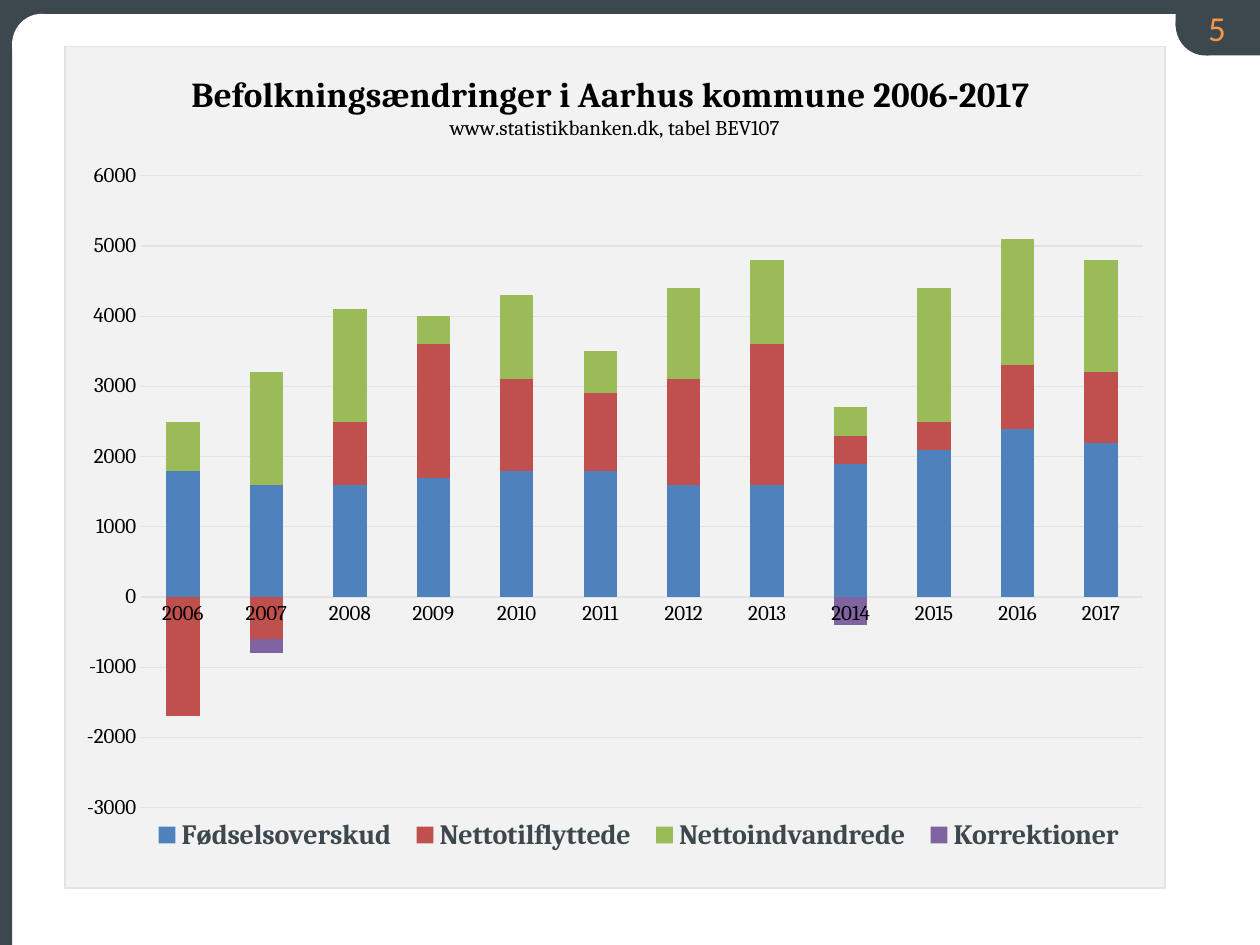
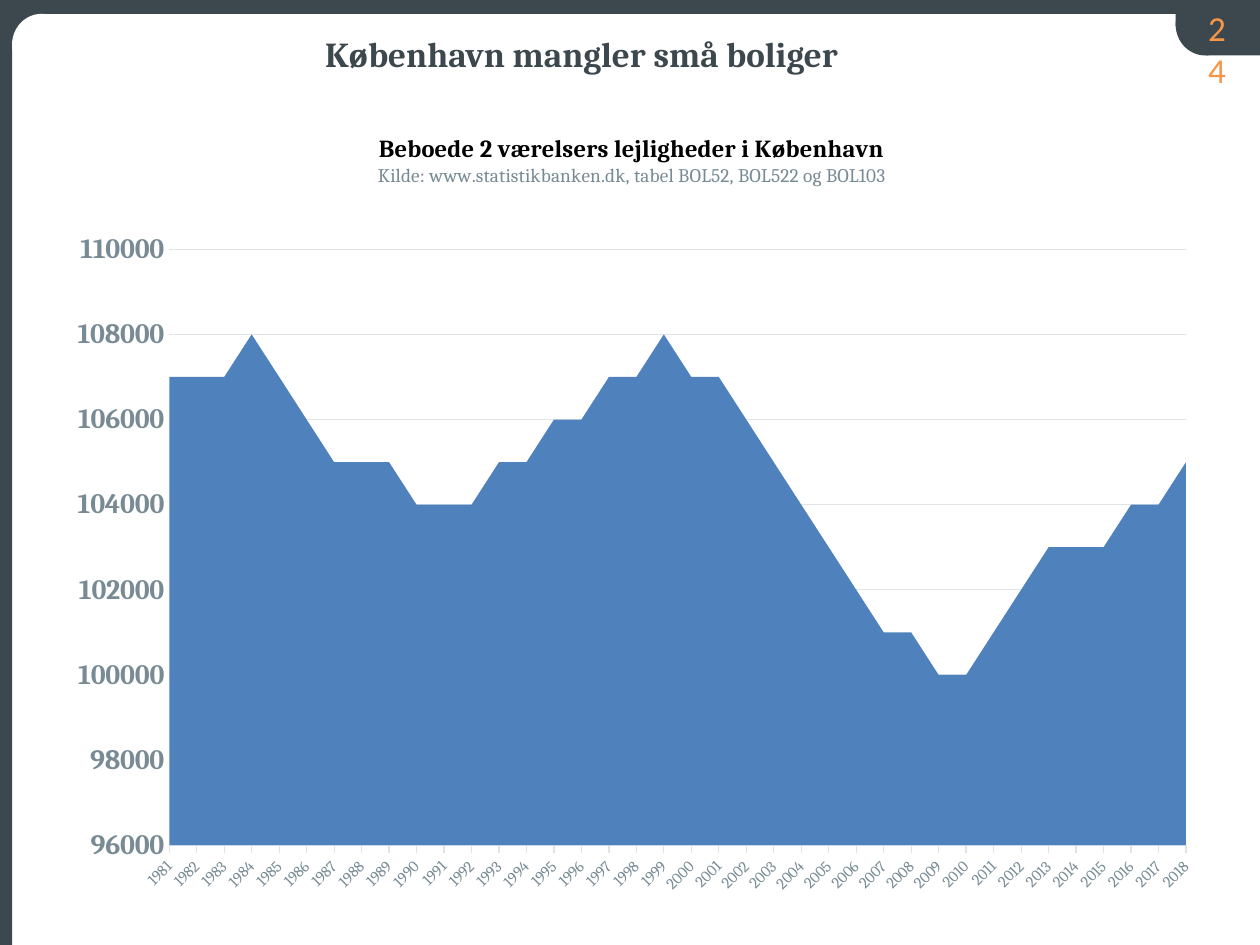
from dataclasses import dataclass

from pptx import Presentation
from pptx.chart.data import CategoryChartData
from pptx.dml.color import RGBColor
from pptx.enum.chart import XL_CHART_TYPE, XL_LEGEND_POSITION, XL_TICK_MARK
from pptx.enum.shapes import MSO_SHAPE
from pptx.enum.text import MSO_ANCHOR, MSO_AUTO_SIZE, PP_ALIGN
from pptx.oxml import parse_xml
from pptx.oxml.ns import nsdecls
from pptx.util import Pt


@dataclass(frozen=True)
class Theme:
    dark: str = "3D484E"
    white: str = "FFFFFF"
    black: str = "000000"
    muted: str = "788B95"
    grid: str = "E0E4E7"
    panel: str = "F2F2F2"
    orange: str = "F79646"
    series: tuple = ("4F81BD", "C0504D", "9BBB59", "8064A2")
    serif: str = "Cambria"
    sans: str = "Calibri"
    head: int = 20
    legend: int = 16
    lead: int = 14
    label: int = 12
    note: int = 11
    base: int = 10
    small: int = 9
    hair: float = 0.75


THEME = Theme()

# Kind, left, top, width, height, colour
BANDS = [
    (MSO_SHAPE.RECTANGLE, 0, 0, 6.9, 540, THEME.dark),
    (MSO_SHAPE.RECTANGLE, 6.9, 0, 713.1, 7.9, THEME.dark),
    (MSO_SHAPE.RECTANGLE, 6.9, 7.9, 17.3, 17.3, THEME.dark),
    (MSO_SHAPE.OVAL, 6.9, 7.9, 33.8, 35.3, THEME.white),
    (MSO_SHAPE.RECTANGLE, 689, 7.9, 31, 23.8, THEME.dark),
    (MSO_SHAPE.OVAL, 671.8, -3.6, 33.8, 35.3, THEME.dark),
    (MSO_SHAPE.RECTANGLE, 671.8, 0, 22.3, 15.1, THEME.dark),
]

CHANGES = {
    "Fødselsoverskud": [1800, 1600, 1600, 1700, 1800, 1800,
                        1600, 1600, 1900, 2100, 2400, 2200],
    "Nettotilflyttede": [-1700, -600, 900, 1900, 1300, 1100,
                         1500, 2000, 400, 400, 900, 1000],
    "Nettoindvandrede": [700, 1600, 1600, 400, 1200, 600,
                         1300, 1200, 400, 1900, 1800, 1600],
    "Korrektioner": [0, -200, 0, 0, 0, 0, 0, 0, -400, 0, 0, 0],
}

FLATS = {
    "Series 1": [
        107000, 107000, 107000, 108000, 107000, 106000, 105000, 105000,
        105000, 104000, 104000, 104000, 105000, 105000, 106000, 106000,
        107000, 107000, 108000, 107000, 107000, 106000, 105000, 104000,
        103000, 102000, 101000, 101000, 100000, 100000, 101000, 102000,
        103000, 103000, 103000, 104000, 104000, 105000,
    ],
}


def rgb(code):
    return RGBColor.from_string(code)


def style(font, size, color, bold=False, name=THEME.serif):
    font.name = name
    font.size = Pt(size)
    font.bold = bold
    font.color.rgb = rgb(color)


def add_bands(prs, slide):
    """Draw the frame and move it to the master, behind everything."""
    tree = prs.slide_master.shapes.element
    for i, (kind, *box, color) in enumerate(BANDS):
        band = slide.shapes.add_shape(kind, *map(Pt, box))
        band.shadow.inherit = False
        band.fill.solid()
        band.fill.fore_color.rgb = rgb(color)
        band.line.fill.background()
        band.element.xpath(".//p:cNvPr")[0].set("id", str(100 + i))
        tree.insert(2 + i, band.element)


def add_number(slide, number):
    box = slide.shapes.add_textbox(Pt(683.3), 0, Pt(28.8), Pt(31.7))
    box.text_frame.word_wrap = True
    para = box.text_frame.paragraphs[0]
    para.text = number
    style(para.font, THEME.head, THEME.orange, name=THEME.sans)


def set_title(slide, text):
    title = slide.shapes.title
    title.left, title.top, title.width, title.height = map(
        Pt, (178.6, 14.6, 357.1, 31.7))
    frame = title.text_frame
    frame.auto_size = MSO_AUTO_SIZE.NONE
    frame.vertical_anchor = MSO_ANCHOR.MIDDLE
    frame.text = text
    para = frame.paragraphs[0]
    para.alignment = PP_ALIGN.LEFT
    style(para.font, THEME.head, THEME.dark, bold=True)


def place(part, frame, spot, inner=False):
    """Fix a chart part at a spot given in slide points."""
    left, top, width, height = frame
    spans = {"x": (spot[0] - left) / width, "y": (spot[1] - top) / height}
    if len(spot) == 4:
        spans.update(w=spot[2] / width, h=spot[3] / height)
    target = '<c:layoutTarget val="inner"/>' if inner else ""
    modes = "".join(f'<c:{k}Mode val="edge"/>' for k in "xy")
    sizes = "".join(f'<c:{k} val="{v:.4f}"/>' for k, v in spans.items())
    for old in part.xpath("c:layout"):
        part.remove(old)
    part.insert(len(part.xpath("c:tx|c:legendPos")), parse_xml(
        f'<c:layout {nsdecls("c")}><c:manualLayout>{target}{modes}{sizes}'
        "</c:manualLayout></c:layout>"))


def area_look(fill=None):
    """Make the fill and border of a chart or its plot area."""
    def solid(color):
        return f'<a:solidFill><a:srgbClr val="{color}"/></a:solidFill>'

    paint = solid(fill) if fill else "<a:noFill/>"
    edge = solid(THEME.grid) if fill else "<a:noFill/>"
    return parse_xml(
        f'<c:spPr {nsdecls("c", "a")}>{paint}'
        f'<a:ln w="{Pt(THEME.hair)}">{edge}</a:ln></c:spPr>')


def set_heading(chart, frame, spot, lines):
    """Write title lines, each given as text, size, colour, bold."""
    chart.has_title = True
    text = chart.chart_title.text_frame
    for i, (line, size, color, bold) in enumerate(lines):
        para = text.add_paragraph() if i else text.paragraphs[0]
        para.text = line
        style(para.font, size, color, bold)
    place(chart.element.xpath("c:chart/c:title")[0], frame, spot)


def hair(line):
    line.width = Pt(THEME.hair)
    line.color.rgb = rgb(THEME.grid)


def set_axes(chart, low, high, step):
    cat, val = chart.category_axis, chart.value_axis
    val.minimum_scale, val.maximum_scale, val.major_unit = low, high, step
    val.has_major_gridlines = True
    hair(val.major_gridlines.format.line)
    hair(cat.format.line)
    val.format.line.fill.background()
    for axis in (cat, val):
        axis.major_tick_mark = axis.minor_tick_mark = XL_TICK_MARK.NONE
    return cat, val


def add_chart(slide, kind, frame, plot, years, table, fill=None):
    data = CategoryChartData()
    data.categories = [str(year) for year in years]
    for name, values in table.items():
        data.add_series(name, values)
    chart = slide.shapes.add_chart(kind, *map(Pt, frame), data).chart
    style(chart.font, THEME.base, THEME.dark)
    chart.has_legend = False
    chart.plots[0].vary_by_categories = False
    for series, color in zip(chart.plots[0].series, THEME.series):
        series.format.fill.solid()
        series.format.fill.fore_color.rgb = rgb(color)
    root = chart.element
    if not root.xpath("c:roundedCorners"):
        root.xpath("c:date1904")[0].addnext(parse_xml(
            f'<c:roundedCorners {nsdecls("c")} val="0"/>'))
    root.xpath("c:chart")[0].addnext(area_look(fill))
    area = root.xpath("c:chart/c:plotArea")[0]
    area.append(area_look())
    place(area, frame, plot, inner=True)
    return chart


def add_changes(slide):
    frame = (36.7, 26.2, 629.4, 481.7)
    chart = add_chart(slide, XL_CHART_TYPE.COLUMN_STACKED, frame,
                      (80.4, 100.3, 573, 361.6), range(2006, 2018),
                      CHANGES, THEME.panel)
    set_heading(chart, frame, (106.9, 39.7), [
        ("Befolkningsændringer i Aarhus kommune 2006-2017 ",
         THEME.head, THEME.black, True),
        ("www.statistikbanken.dk, tabel BEV107",
         THEME.label, THEME.black, False),
    ])
    for axis in set_axes(chart, -3000, 6000, 1000):
        style(axis.tick_labels.font, THEME.label, THEME.black)
    bars = chart.plots[0]
    bars.gap_width, bars.overlap = 150, 100
    for series in bars.series:
        series.invert_if_negative = False
    chart.has_legend = True
    legend = chart.legend
    legend.position = XL_LEGEND_POSITION.BOTTOM
    legend.include_in_layout = False
    style(legend.font, THEME.legend, THEME.dark, bold=True)
    place(chart.element.xpath("c:chart/c:legend")[0], frame,
          (81, 465, 568, 25))


def add_flats(slide):
    frame = (31, 60.5, 663.1, 458.6)
    chart = add_chart(slide, XL_CHART_TYPE.AREA_STACKED, frame,
                      (96.7, 142.5, 581.1, 340.6), range(1981, 2019), FLATS)
    set_heading(chart, frame, (213.8, 73.6), [
        ("Beboede 2 værelsers lejligheder i København ",
         THEME.lead, THEME.black, True),
        ("Kilde: www.statistikbanken.dk, tabel BOL52, BOL522 og BOL103 ",
         THEME.note, THEME.muted, False),
    ])
    cat, val = set_axes(chart, 96000, 110000, 2000)
    cat.major_tick_mark = XL_TICK_MARK.OUTSIDE
    style(cat.tick_labels.font, THEME.small, THEME.muted)
    style(val.tick_labels.font, THEME.legend, THEME.muted, bold=True)
    root = chart.element
    root.xpath(".//c:catAx/c:txPr/a:bodyPr")[0].set("rot", "-2700000")
    root.xpath(".//c:valAx/c:crossBetween")[0].set("val", "midCat")


def main():
    prs = Presentation()
    prs.slide_width, prs.slide_height = Pt(720), Pt(540)
    only, blank = prs.slide_layouts[5], prs.slide_layouts[6]

    people = prs.slides.add_slide(blank)
    add_bands(prs, people)
    add_number(people, "5")
    add_changes(people)

    homes = prs.slides.add_slide(only)
    add_number(homes, "24")
    add_flats(homes)
    set_title(homes, "København mangler små boliger")

    prs.save("out.pptx")


if __name__ == "__main__":
    main()
